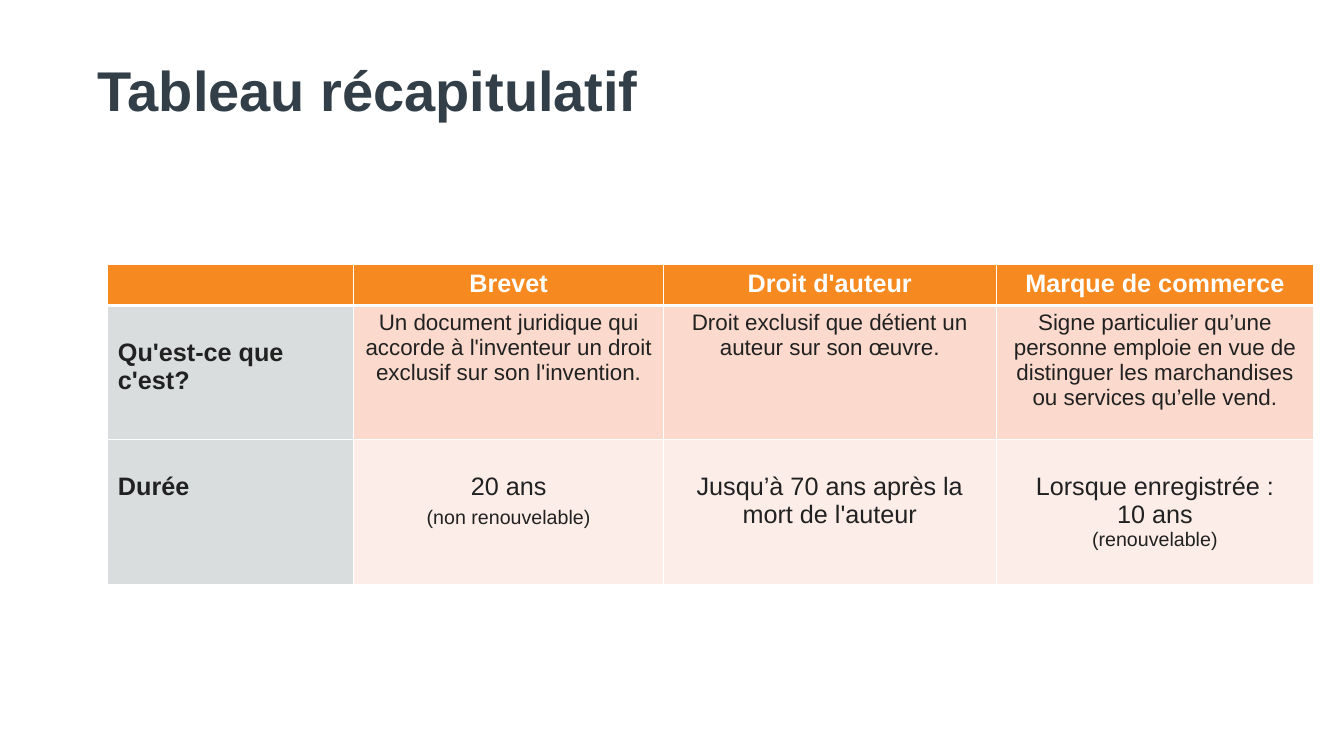
from lxml import etree
from pptx import Presentation, util as u
from pptx.dml.color import RGBColor
from pptx.enum import text
from pptx.oxml.ns import qn

WHITE, INK, TITLE = "FFFFFF", "212121", "333F48"
ORANGE, GREY, PINK, PALE = "F6891F", "DADDDE", "FBDACD", "FDEDE8"


def add_span(para, words, size, color, bold):
    span = para.add_run()
    span.text = words
    span.font.name = "Arial"
    span.font.size = u.Pt(size)
    span.font.bold = bold
    span.font.color.rgb = RGBColor.from_string(color)


def add_border(cell, side, width):
    """Draw a white line on one side (L, R, T or B), before the cell's fill."""
    line = etree.SubElement(cell._tc.get_or_add_tcPr(), qn(f"a:ln{side}"), w=str(u.Pt(width)))
    fill = etree.SubElement(line, qn("a:solidFill"))
    etree.SubElement(fill, qn("a:srgbClr"), val=WHITE)


deck = Presentation()
deck.slide_width, deck.slide_height = u.Inches(13.33), u.Inches(7.5)
page = deck.slides.add_slide(deck.slide_layouts[6])

# Title
box = page.shapes.add_textbox(u.Inches(0.97), u.Inches(0.63), u.Inches(11.4), u.Inches(1))
frame = box.text_frame
frame.word_wrap = True
frame.margin_left = frame.margin_right = frame.margin_top = frame.margin_bottom = 0
frame.paragraphs[0].line_spacing = 0.9
add_span(frame.paragraphs[0], "Tableau récapitulatif", 40, TITLE, True)

# Summary table: each cell is a list of (line, size)
rows = [
    [[], [("Brevet", 18)], [("Droit d'auteur", 18)], [("Marque de commerce", 18)]],
    [
        [("Qu'est-ce que c'est?", 18)],
        [("Un document juridique qui accorde à l'inventeur un droit exclusif sur son l'invention.", 16)],
        [("Droit exclusif que détient un auteur sur son œuvre.", 16)],
        [("Signe particulier qu’une personne emploie en vue de distinguer "
          "les marchandises ou services qu’elle vend.", 16)],
    ],
    [
        [("Durée", 18)],
        [("20 ans", 18), ("(non renouvelable)", 14)],
        [("Jusqu’à 70 ans après la mort de l'auteur", 18)],
        [("Lorsque enregistrée :", 18), ("10 ans", 18), ("(renouvelable)", 14)],
    ],
]
widths = [2.44, 3.07, 3.3, 3.15]
heights = [0.41, 1.33, 1.44]
body_fills = [ORANGE, PINK, PALE]

table = page.shapes.add_table(
    len(rows), len(widths), u.Inches(1.07), u.Inches(2.62),
    u.Inches(sum(widths)), u.Inches(sum(heights))).table
for column, width in zip(table.columns, widths):
    column.width = u.Inches(width)

for r, row in enumerate(rows):
    table.rows[r].height = u.Inches(heights[r])
    for c, lines in enumerate(row):
        cell = table.cell(r, c)
        header, label = r == 0, r > 0 and c == 0
        for side in "LRTB":
            heavy = (r, side) in [(0, "B"), (1, "T")]
            add_border(cell, side, 3 if heavy else 1)
        cell.fill.solid()
        cell.fill.fore_color.rgb = RGBColor.from_string(GREY if label else body_fills[r])
        cell.margin_top = u.Inches(0.33 if label or r == 2 else 0.05)
        for i, (words, size) in enumerate(lines):
            para = cell.text_frame.paragraphs[0] if i == 0 else cell.text_frame.add_paragraph()
            para.alignment = text.PP_ALIGN.LEFT if label else text.PP_ALIGN.CENTER
            if (r, c, i) == (2, 1, 1):
                para.space_before = u.Pt(4)
            add_span(para, words, size, WHITE if header else INK, header or label)

deck.save("out.pptx")
